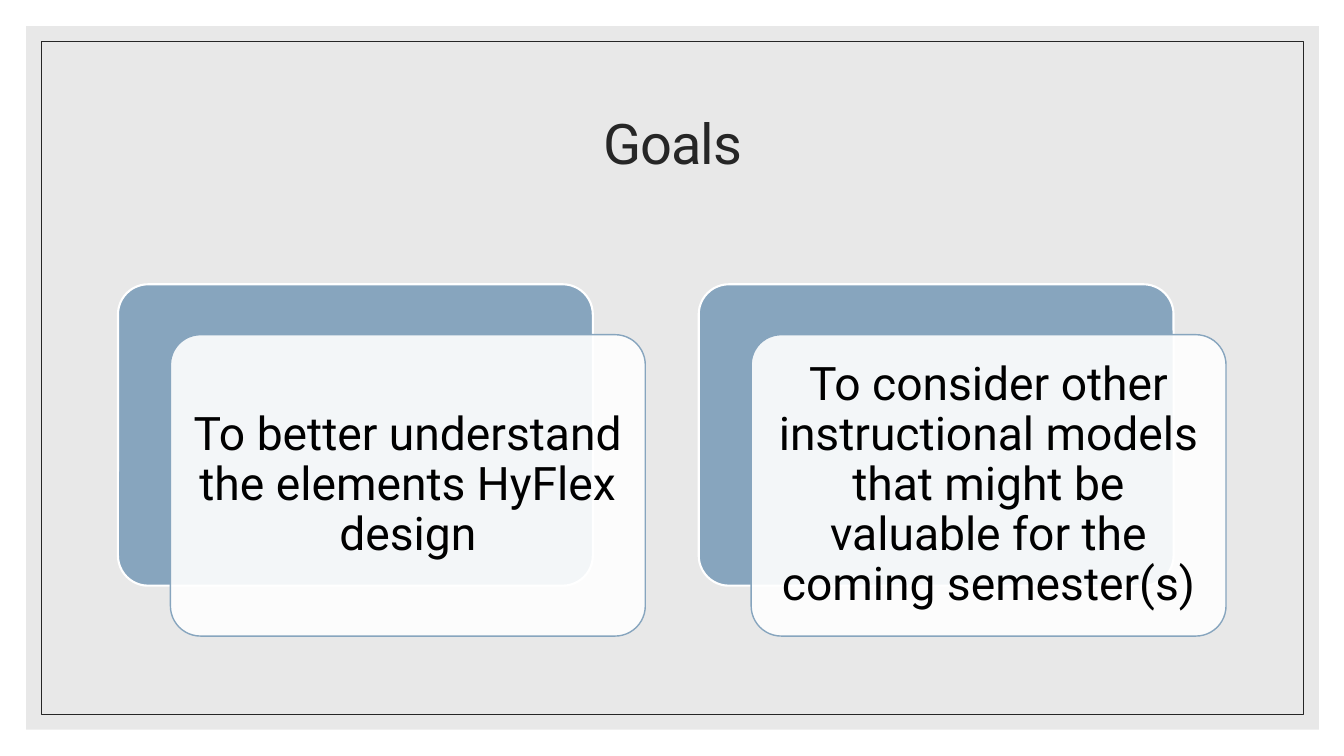
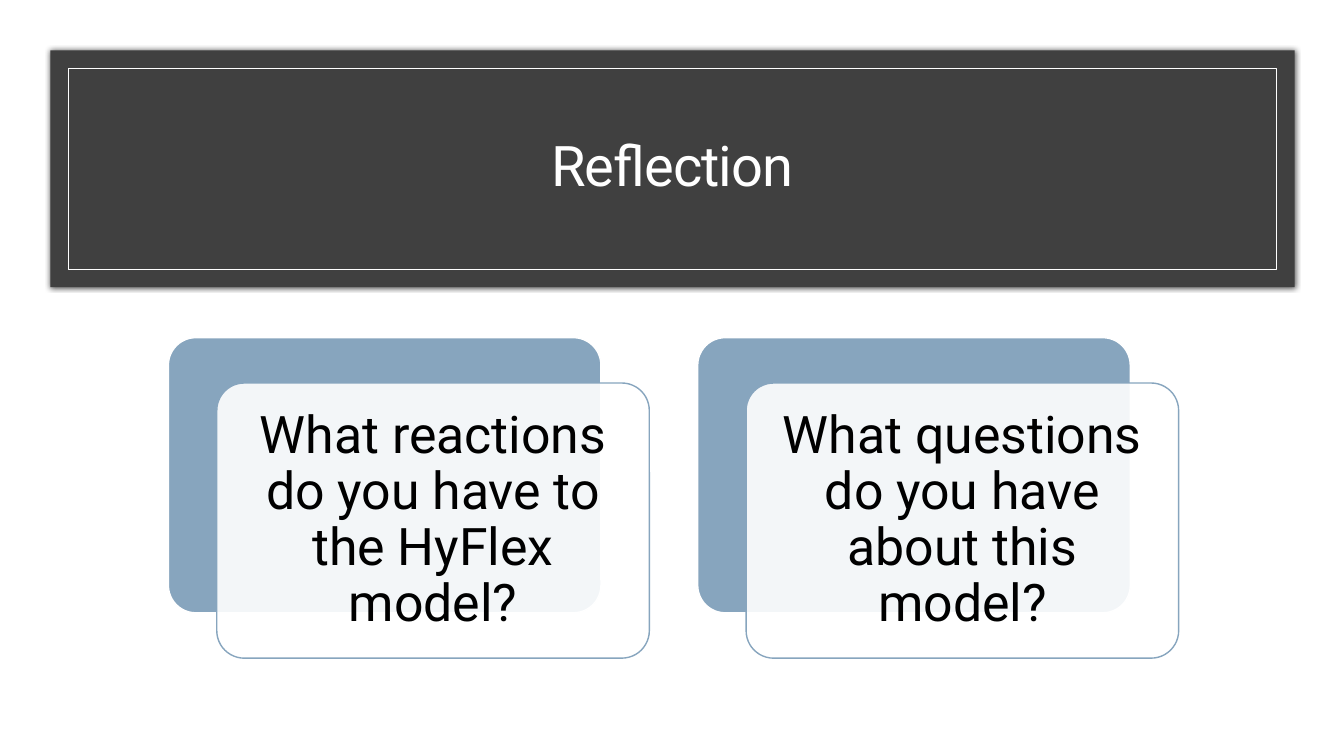
from dataclasses import dataclass

from lxml import etree
from pptx import Presentation, util as u
from pptx.dml.color import RGBColor
from pptx.enum import shapes, text
from pptx.oxml import ns


@dataclass(frozen=True)
class Theme:
    font: str = "Roboto"
    white: str = "FFFFFF"
    black: str = "000000"
    ink: str = "262626"
    panel: str = "D9D9D9"
    band: str = "404040"
    accent: str = "87A5BE"
    title_size: int = 40
    title_spacing: float = -0.7
    line_spacing: float = 0.9
    hairline: float = 0.5
    card_line: float = 1
    corner: float = 0.1


class SlideBuilder:
    def __init__(self, theme):
        self.theme = theme
        self.deck = Presentation()
        self.deck.slide_width = u.Inches(13.33)
        self.deck.slide_height = u.Inches(7.5)
        self.slide = None

    def new_slide(self):
        self.slide = self.deck.slides.add_slide(self.deck.slide_layouts[6])
        background = self.slide.background.fill
        background.solid()
        background.fore_color.rgb = RGBColor.from_string(self.theme.white)

    def box(self, at, fill=None, opacity=100, line=None, line_width=1, rounded=False):
        kind = shapes.MSO_SHAPE.ROUNDED_RECTANGLE if rounded else shapes.MSO_SHAPE.RECTANGLE
        box = self.slide.shapes.add_shape(kind, *map(u.Inches, at))
        box.shadow.inherit = False
        if rounded:
            box.adjustments[0] = self.theme.corner
        if fill:
            box.fill.solid()
            box.fill.fore_color.rgb = RGBColor.from_string(fill)
            if opacity < 100:
                solid = box._element.spPr.find(ns.qn("a:solidFill"))
                etree.SubElement(solid[0], ns.qn("a:alpha"), val=str(opacity * 1000))
        else:
            box.fill.background()
        if line:
            box.line.color.rgb = RGBColor.from_string(line)
            box.line.width = u.Pt(line_width)
        else:
            box.line.fill.background()
        return box

    def glow(self, box, blur, opacity):
        """Give the box a soft shadow without offset."""
        effects = box._element.spPr.find(ns.qn("a:effectLst"))
        shadow = etree.SubElement(effects, ns.qn("a:outerShdw"), blurRad=str(u.Pt(blur)),
                                  dist="0", dir="0", algn="ctr", rotWithShape="0")
        color = etree.SubElement(shadow, ns.qn("a:srgbClr"), val=self.theme.black)
        etree.SubElement(color, ns.qn("a:alpha"), val=str(opacity * 1000))

    def put_text(self, box, words, size, color):
        """Fill the box with one centred paragraph and return its run."""
        frame = box.text_frame
        frame.word_wrap = True
        frame.vertical_anchor = text.MSO_ANCHOR.MIDDLE
        para = frame.paragraphs[0]
        para.alignment = text.PP_ALIGN.CENTER
        para.line_spacing = self.theme.line_spacing
        span = para.add_run()
        span.text = words
        span.font.name = self.theme.font
        span.font.size = u.Pt(size)
        span.font.color.rgb = RGBColor.from_string(color)
        return span

    def framed_panel(self, at, gap, fill, line, opacity=100):
        """Draw a filled panel with a thin outline inside its edge."""
        left, top, width, height = at
        panel = self.box(at, fill, opacity)
        inner = (left + gap, top + gap, width - 2 * gap, height - 2 * gap)
        self.box(inner, line=line, line_width=self.theme.hairline)
        return panel

    def title(self, words, top, color):
        box = self.slide.shapes.add_textbox(*map(u.Inches, (1.17, top, 11, 1.5)))
        span = self.put_text(box, words, self.theme.title_size, color)
        span.font._element.set("spc", str(round(self.theme.title_spacing * 100)))

    def cards(self, messages, left, top, size, pitch, offset, text_size, inset, back_line):
        """Lay out a row of white cards, each over a shifted accent card."""
        theme = self.theme
        for index, message in enumerate(messages):
            x = left + index * pitch
            self.box((x, top, *size), theme.accent, line=theme.white,
                     line_width=back_line, rounded=True)
            card = self.box((x + offset[0], top + offset[1], *size), theme.white, 90,
                            theme.accent, theme.card_line, rounded=True)
            frame = card.text_frame
            frame.margin_left = frame.margin_right = u.Inches(inset)
            frame.margin_top = frame.margin_bottom = u.Inches(inset)
            self.put_text(card, message, text_size, theme.black)


def goals(builder):
    theme = builder.theme
    builder.new_slide()
    builder.framed_panel((0.26, 0.26, 12.82, 6.98), 0.15, theme.panel, theme.ink, opacity=60)
    builder.title("Goals", 0.7, theme.ink)
    builder.cards(
        ["To better understand the elements HyFlex design",
         "To consider other instructional models that might be valuable "
         "for the coming semester(s)"],
        left=1.17, top=2.82, size=(4.71, 2.99), pitch=5.76, offset=(0.52, 0.5),
        text_size=33, inset=0.14, back_line=1.5)


def reflection(builder):
    theme = builder.theme
    builder.new_slide()
    band = builder.framed_panel((0.5, 0.5, 12.34, 2.35), 0.18, theme.band, theme.white)
    builder.glow(band, blur=4, opacity=66)
    builder.title("Reflection", 0.92, theme.white)
    builder.cards(
        ["What reactions do you have to the HyFlex model?",
         "What questions do you have about this model?"],
        left=1.67, top=3.35, size=(4.29, 2.73), pitch=5.25, offset=(0.48, 0.45),
        text_size=37, inset=0.15, back_line=1)


def main():
    builder = SlideBuilder(Theme())
    goals(builder)
    reflection(builder)
    builder.deck.save("out.pptx")


if __name__ == "__main__":
    main()
